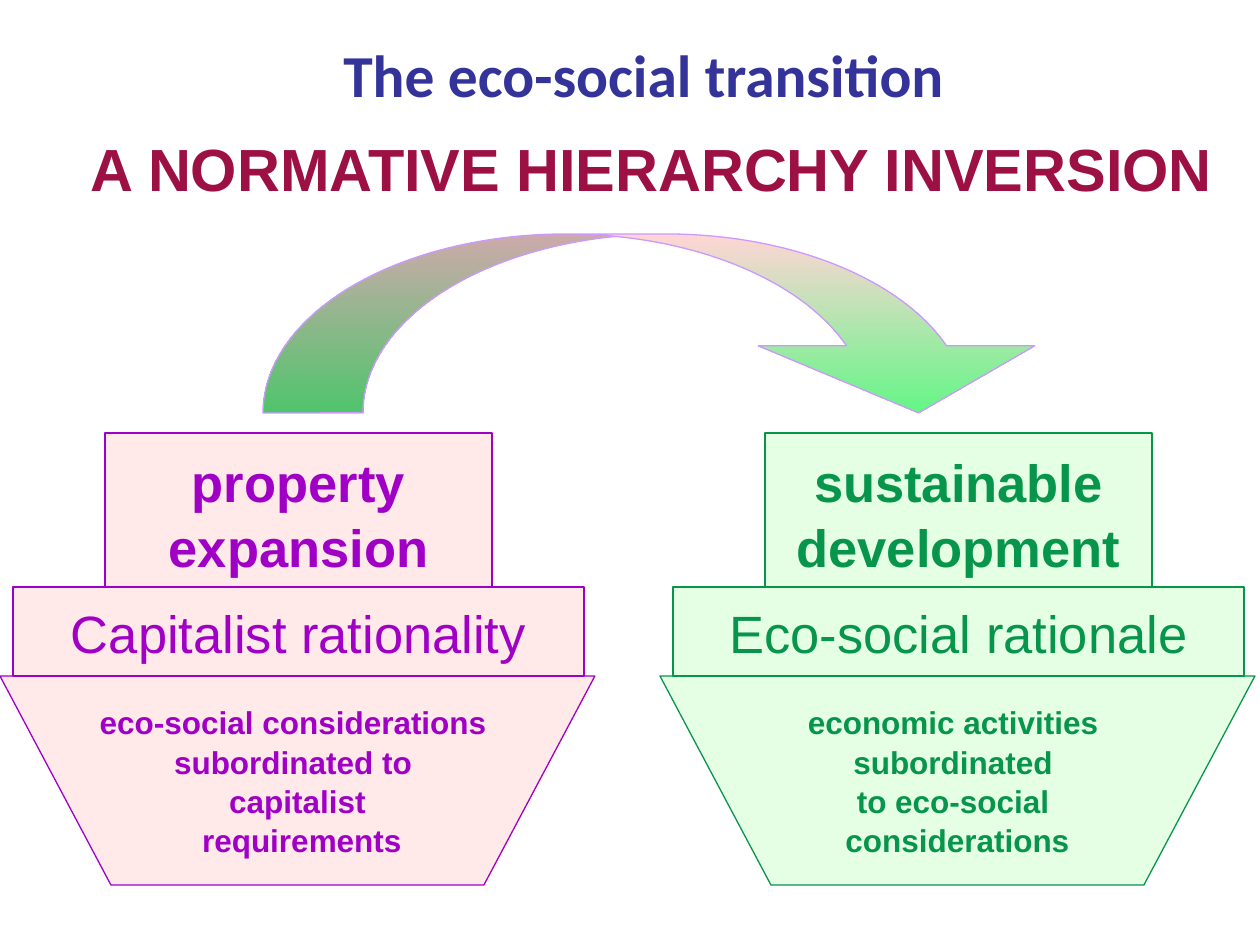
"""Build the slide on the eco-social transition as an inversion of hierarchy."""
from pptx import Presentation
from pptx import util as u
from pptx.dml.color import RGBColor
from pptx.enum import shapes, text

PX = u.Inches(1) / 126
NAVY = RGBColor(0x33, 0x33, 0x99)
CRIMSON = RGBColor(0x9C, 0x10, 0x43)
PURPLE = RGBColor(0xA0, 0x00, 0xC6)
PINK = RGBColor(0xFF, 0xE9, 0xE9)
GREEN = RGBColor(0x07, 0x95, 0x4B)
MINT = RGBColor(0xE5, 0xFF, 0xE5)
LILAC = RGBColor(0xCC, 0x99, 0xFF)
ROSE = RGBColor(0xFF, 0xD5, 0xD5)
LIME = RGBColor(0x64, 0xF6, 0x87)


class Canvas:
    def __init__(self, slide):
        self.shapes = slide.shapes
        self.line_width = u.Pt(0.75)

    def box(self, *lengths):
        return [u.Emu(round(n * PX)) for n in lengths]

    def label(self, sp, words, size, color, bold=True, font="Arial", spacing=None):
        tf = sp.text_frame
        tf.text = words
        p = tf.paragraphs[0]
        p.alignment = text.PP_ALIGN.CENTER
        p.line_spacing = spacing
        for r in p.runs:
            r.font.name = font
            r.font.size = u.Pt(size)
            r.font.bold = bold
            r.font.color.rgb = color

    def outline(self, sp, color):
        sp.shadow.inherit = False
        sp.line.color.rgb = color
        sp.line.width = self.line_width

    def title(self, box, words, color, font):
        sp = self.shapes.add_textbox(*self.box(*box))
        sp.text_frame.word_wrap = True
        self.label(sp, words, 34, color, font=font)

    def panel(self, sp, words, size, ink, fill, bold=True):
        self.outline(sp, ink)
        sp.fill.solid()
        sp.fill.fore_color.rgb = fill
        sp.text_frame.word_wrap = False
        sp.text_frame.vertical_anchor = text.MSO_ANCHOR.MIDDLE
        self.label(sp, words, size, ink, bold, spacing=1.04)

    def block(self, box, words, ink, fill, bold=True):
        sp = self.shapes.add_shape(shapes.MSO_SHAPE.RECTANGLE, *self.box(*box))
        self.panel(sp, words, 30, ink, fill, bold)

    def hull(self, points, words, ink, fill):
        builder = self.shapes.build_freeform(*points[0], scale=PX)
        builder.add_line_segments(points[1:], close=True)
        self.panel(builder.convert_to_shape(), words, 18, ink, fill)

    def tower(self, x, top, middle, base, ink, fill):
        self.block((x + 105, 433, 387, 159), top, ink, fill)
        corners = [(x, 676), (x + 111, 885), (x + 484, 885), (x + 595, 676)]
        self.hull(corners, base, ink, fill)
        self.block((x + 13, 587, 571, 89), middle, ink, fill, bold=False)

    def arrow(self, box, adjustments, start, end, line):
        sp = self.shapes.add_shape(shapes.MSO_SHAPE.CURVED_DOWN_ARROW, *self.box(*box))
        for i, value in enumerate(adjustments):
            sp.adjustments[i] = value
        self.outline(sp, line)
        sp.fill.gradient()
        sp.fill.gradient_angle = 270
        for stop, color in zip(sp.fill.gradient_stops, (start, end)):
            stop.color.rgb = color


def main():
    prs = Presentation()
    prs.slide_width, prs.slide_height = u.Inches(10), u.Inches(7.5)
    s = Canvas(prs.slides.add_slide(prs.slide_layouts[6]))
    s.title((113, 32, 1061, 84), "The eco-social transition", NAVY, "Calibri")
    s.title((54, 126, 1181, 84), " A NORMATIVE HIERARCHY INVERSION", CRIMSON, "Arial")
    s.tower(0, " property \vexpansion", "Capitalist rationality",
            "eco-social considerations \vsubordinated to \vcapitalist\v requirements",
            PURPLE, PINK)
    s.tower(660, "sustainable\v development ", "Eco-social rationale",
            "economic activities \vsubordinated \vto eco-social \vconsiderations",
            GREEN, MINT)
    s.arrow((263, 234, 794, 179), (0.559, 1.546, 0.375), ROSE, LIME, LILAC)
    prs.save("out.pptx")


if __name__ == "__main__":
    main()
